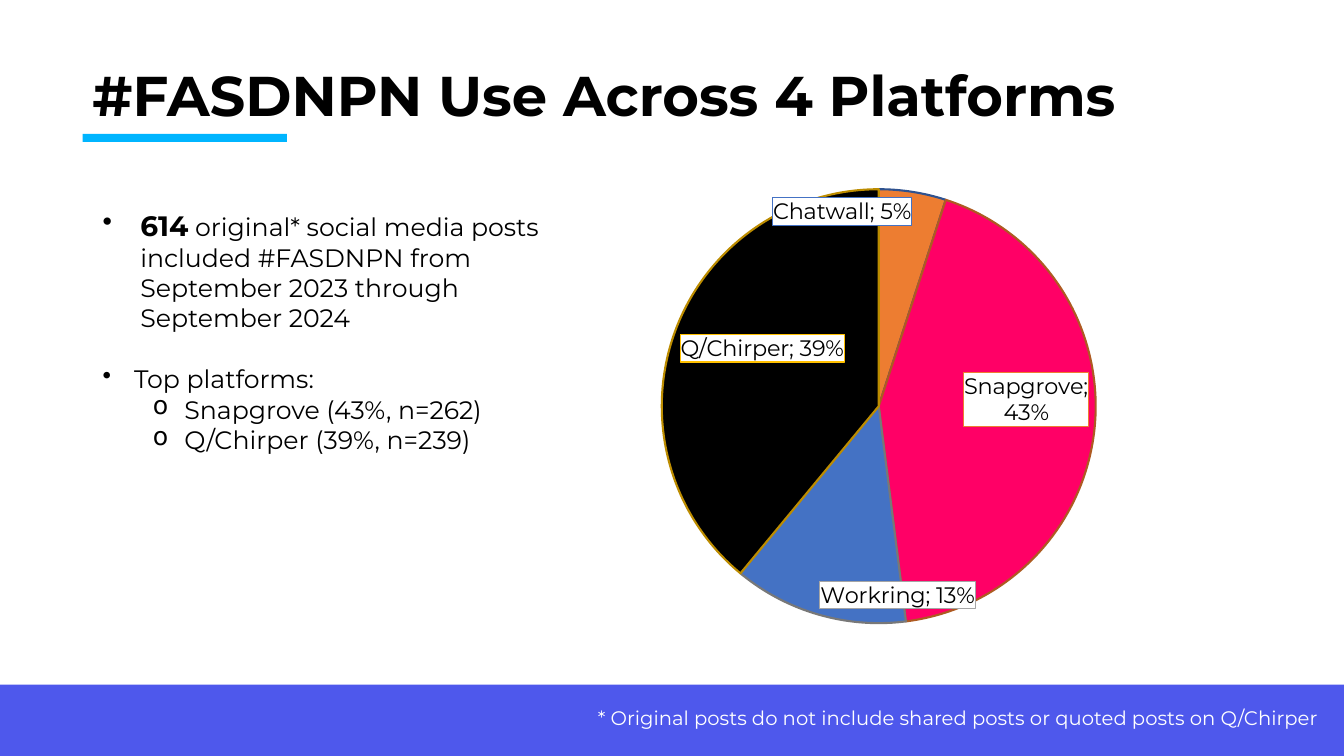
from lxml.etree import SubElement
from pptx import Presentation
from pptx.chart.data import CategoryChartData
from pptx.dml.color import RGBColor
from pptx.enum.chart import XL_CHART_TYPE, XL_LABEL_POSITION
from pptx.enum.shapes import MSO_SHAPE
from pptx.enum.text import MSO_ANCHOR
from pptx.oxml import parse_xml
from pptx.oxml.ns import nsdecls, qn
from pptx.util import Pt

COLORS = {
    "ink": "000000", "paper": "FFFFFF", "band": "4E58EC", "accent": "00B5FF",
}
FORMATS = {
    "title": {"name": "Montserrat", "size": Pt(40), "bold": True},
    "count": {"name": "Montserrat", "size": Pt(20), "bold": True},
    "body": {"name": "Montserrat", "size": Pt(18), "bold": False},
    "note": {"name": "Montserrat", "size": Pt(14), "bold": False},
    "label": {"name": "Montserrat", "size": Pt(16), "bold": False},
    "chart": {"name": "Calibri", "size": Pt(10), "bold": False},
}
# platform, share, slice fill, slice outline, label outline
PLATFORMS = [
    ("Chatwall", 0.05, "ED7D31", "2F528F", "4472C4"),
    ("Snapgrove", 0.43, "FF0066", "AE5A21", "ED7D31"),
    ("Workring", 0.13, "4472C4", "787878", "A5A5A5"),
    ("Q/Chirper", 0.39, "000000", "BC8C00", "FFC000"),
]
# runs, level, left margin, hanging indent, bullet, space before
FINDINGS = [
    ([("614", "count"),
      (" original* social media posts included #FASDNPN from "
       "September 2023 through September 2024", "body")], 0, 27, 27, "•", 0),
    ([("Top platforms:", "body")], 0, 22.5, 22.5, "•", 22),
    ([("Snapgrove (43%, n=262)", "body")], 1, 58.5, 22.5, "o", 0),
    ([("Q/Chirper (39%, n=239)", "body")], 1, 58.5, 22.5, "o", 0),
]


def style(font, kind, color="ink"):
    for attribute, value in FORMATS[kind].items():
        setattr(font, attribute, value)
    font.color.rgb = RGBColor.from_string(COLORS[color])


def add_run(paragraph, text, kind, color="ink"):
    run = paragraph.add_run()
    run.text = text
    style(run.font, kind, color)


def add_frame(slide, x, y, w, h):
    frame = slide.shapes.add_textbox(Pt(x), Pt(y), Pt(w), Pt(h)).text_frame
    frame.word_wrap = True
    return frame


def add_bar(slide, x, y, w, h, color):
    bar = slide.shapes.add_shape(MSO_SHAPE.RECTANGLE, Pt(x), Pt(y), Pt(w), Pt(h))
    bar.shadow.inherit = False
    bar.fill.solid()
    bar.fill.fore_color.rgb = RGBColor.from_string(COLORS[color])
    bar.line.fill.background()


def add_header(slide, x, y, w, h):
    add_bar(slide, x, y + h, 146, 5.8, "accent")
    title = add_frame(slide, x, y, w, h)
    title.vertical_anchor = MSO_ANCHOR.MIDDLE
    title.paragraphs[0].line_spacing = 0.9
    add_run(title.paragraphs[0], "#FASDNPN Use Across 4 Platforms", "title")


def add_findings(slide, x, y, w, h):
    frame = add_frame(slide, x, y, w, h)
    for index, (runs, level, margin, hang, bullet, gap) in enumerate(FINDINGS):
        finding = frame.add_paragraph() if index else frame.paragraphs[0]
        finding.level = level
        if gap:
            finding.space_before = Pt(gap)
        properties = finding._p.get_or_add_pPr()
        properties.set("marL", str(Pt(margin)))
        properties.set("indent", str(-Pt(hang)))
        SubElement(properties, qn("a:buChar")).set("char", bullet)
        for text, kind in runs:
            add_run(finding, text, kind)


def frame_label(label, outline):
    """Show category and value in a white box with a thin outline."""
    text = label.find(qn("c:txPr"))
    text.addprevious(parse_xml(
        f'<c:numFmt {nsdecls("c")} formatCode="0%" sourceLinked="0"/>'))
    text.addprevious(parse_xml(
        f'<c:spPr {nsdecls("c", "a")}>'
        f'<a:solidFill><a:srgbClr val="{COLORS["paper"]}"/></a:solidFill>'
        f'<a:ln w="9525"><a:solidFill><a:srgbClr val="{outline}"/></a:solidFill></a:ln>'
        '</c:spPr>'))
    label.find(qn("c:showCatName")).set("val", "1")
    label.find(qn("c:showVal")).set("val", "1")
    label.find(qn("c:showPercent")).set("val", "0")
    SubElement(label, qn("c:separator")).text = "; "


def place_pie(chart, w, h, diameter):
    """Centre the pie in its chart box."""
    plot_area = chart.element.find(".//" + qn("c:plotArea"))
    for layout in plot_area.findall(qn("c:layout")):
        plot_area.remove(layout)
    share_w, share_h = diameter / w, diameter / h
    sizes = {"x": (1 - share_w) / 2, "y": (1 - share_h) / 2,
             "w": share_w, "h": share_h}
    values = "".join(f'<c:{key} val="{value:.4f}"/>' for key, value in sizes.items())
    plot_area.insert(0, parse_xml(
        f'<c:layout {nsdecls("c")}><c:manualLayout><c:layoutTarget val="inner"/>'
        f'<c:xMode val="edge"/><c:yMode val="edge"/>{values}'
        '</c:manualLayout></c:layout>'))


def add_platform_pie(slide, x, y, w, h):
    shares = CategoryChartData(number_format="0%")
    shares.categories = [platform[0] for platform in PLATFORMS]
    shares.add_series("Series 1", [platform[1] for platform in PLATFORMS])
    chart = slide.shapes.add_chart(
        XL_CHART_TYPE.PIE, Pt(x), Pt(y), Pt(w), Pt(h), shares).chart
    chart.has_legend = False
    chart.has_title = False
    style(chart.font, "chart")
    pie = chart.plots[0]
    pie.vary_by_categories = True
    for index, (_, _, fill, outline, _) in enumerate(PLATFORMS):
        point = pie.series[0].points[index]
        point.format.fill.solid()
        point.format.fill.fore_color.rgb = RGBColor.from_string(fill)
        point.format.line.color.rgb = RGBColor.from_string(outline)
        point.format.line.width = Pt(1.5)
        style(point.data_label.font, "label")
        point.data_label.position = XL_LABEL_POSITION.INSIDE_END
    for label, platform in zip(chart.element.xpath(".//c:dLbl"), PLATFORMS):
        frame_label(label, platform[4])
    place_pie(chart, w, h, 310)


def add_footer(slide, x, y, w, h):
    add_bar(slide, x, y, w, h, "band")
    note = add_frame(slide, x + w - 540, y + 11.5, 540, 24.5)
    add_run(note.paragraphs[0],
            "* Original posts do not include shared posts or quoted posts on Q/Chirper",
            "note", "paper")


def main():
    deck = Presentation()
    deck.slide_width, deck.slide_height = Pt(960), Pt(540)
    slide = deck.slides.add_slide(deck.slide_layouts[6])
    # Footer band with note
    add_footer(slide, 0, 489, 960, 51)
    # Title with accent line
    add_header(slide, 59, 44.6, 842, 51)
    # Platform shares
    add_platform_pie(slide, 299, 125.3, 657.4, 329.8)
    # Findings
    add_findings(slide, 66.2, 145.4, 341.3, 184.3)
    deck.save("out.pptx")


if __name__ == "__main__":
    main()
